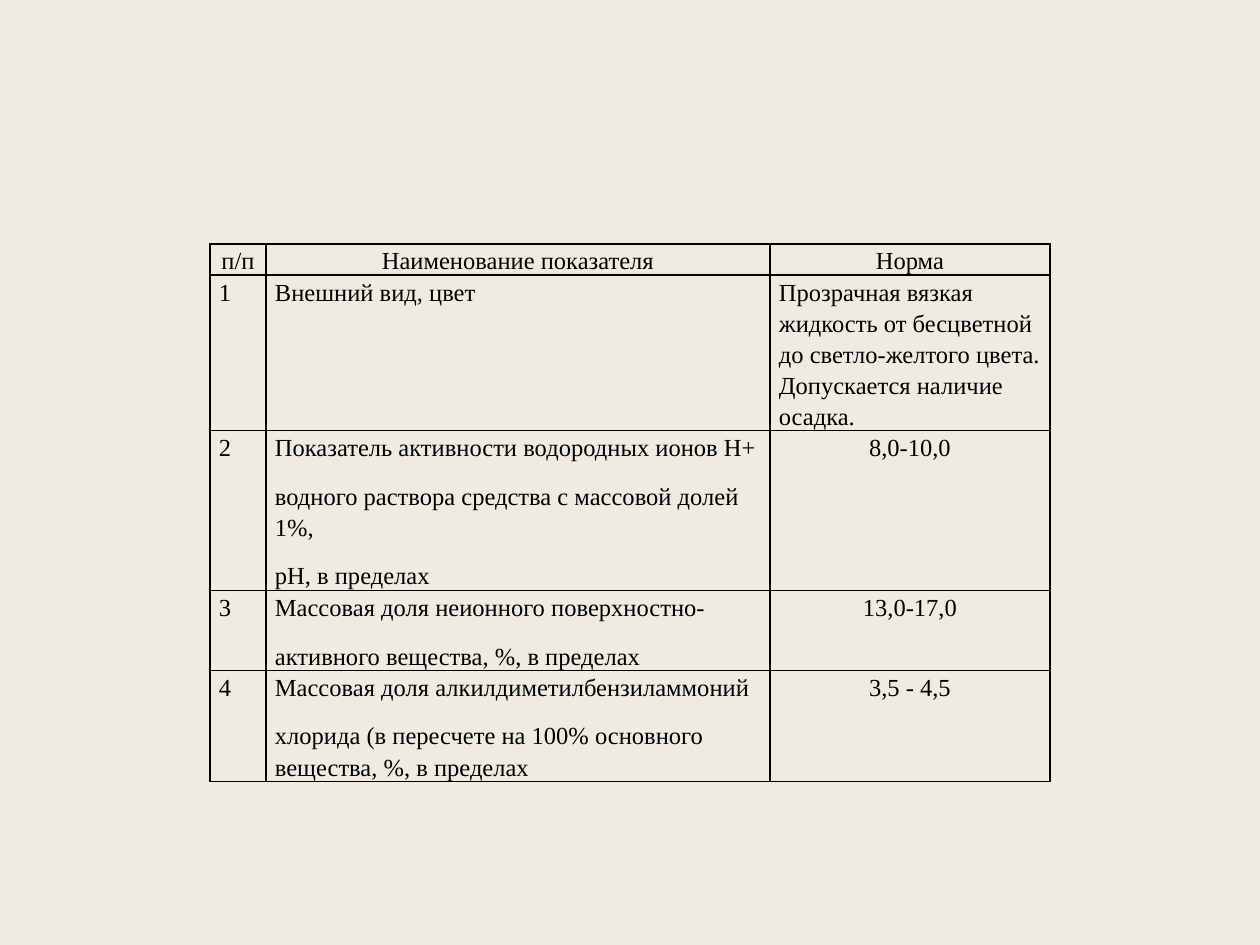
from lxml.etree import SubElement
from pptx import Presentation
from pptx.dml.color import RGBColor
from pptx.enum.text import PP_ALIGN
from pptx.oxml.ns import qn
from pptx.util import Pt

THEME = {
    "background": "EEECE1",
    "ink": "000000",
    "font": "Times New Roman",
    "size": Pt(14),
    "border": Pt(1),
}
PARAGRAPH = {"line_spacing": 1.15, "space_after": Pt(10), "space_before": Pt(0)}


def px(length):
    return round(length * 914400 / 126)


def draw_borders(cell):
    properties = cell._tc.get_or_add_tcPr()
    for position, side in enumerate(("a:lnL", "a:lnR", "a:lnT", "a:lnB")):
        line = SubElement(properties, qn(side), w=str(THEME["border"]))
        fill = SubElement(line, qn("a:solidFill"))
        SubElement(fill, qn("a:srgbClr"), val=THEME["ink"])
        properties.insert(position, line)


MARGINS = {
    "margin_left": px(9),
    "margin_right": px(9),
    "margin_top": 0,
    "margin_bottom": 0,
}
column_widths = [56, 504, 280]
row_heights = [31, 155, 160, 79, 111]
indicators = [
    ("п/п", "Наименование показателя", "Норма"),
    (
        "1",
        "Внешний вид, цвет",
        "Прозрачная вязкая жидкость от бесцветной до светло-желтого цвета. "
        "Допускается наличие осадка.",
    ),
    (
        "2",
        "Показатель активности водородных ионов Н+\n"
        "водного раствора средства с массовой долей 1%,\n"
        "рН, в пределах",
        "8,0-10,0",
    ),
    (
        "3",
        "Массовая доля неионного поверхностно-\nактивного вещества, %, в пределах",
        "13,0-17,0",
    ),
    (
        "4",
        "Массовая доля алкилдиметилбензиламмоний\n"
        "хлорида (в пересчете на 100% основного вещества, %, в пределах",
        "3,5 - 4,5",
    ),
]

deck = Presentation()
deck.slide_width, deck.slide_height = px(1260), px(945)
slide = deck.slides.add_slide(deck.slide_layouts[6])
slide.background.fill.solid()
slide.background.fill.fore_color.rgb = RGBColor.from_string(THEME["background"])

norms = slide.shapes.add_table(
    len(row_heights), len(column_widths),
    px(210), px(244), px(sum(column_widths)), px(sum(row_heights)),
).table
norms.first_row = False
norms.horz_banding = False
for column, width in zip(norms.columns, column_widths):
    column.width = px(width)
for row, height in zip(norms.rows, row_heights):
    row.height = px(height)

for row_number, indicator in enumerate(indicators):
    for column_number, wording in enumerate(indicator):
        cell = norms.cell(row_number, column_number)
        cell.text = wording
        cell.fill.background()
        draw_borders(cell)
        for name, value in MARGINS.items():
            setattr(cell, name, value)
        centred = row_number == 0 or (column_number == 2 and row_number > 1)
        for paragraph in cell.text_frame.paragraphs:
            paragraph.alignment = PP_ALIGN.CENTER if centred else PP_ALIGN.LEFT
            for name, value in PARAGRAPH.items():
                setattr(paragraph, name, value)
            for run in paragraph.runs:
                run.font.name = THEME["font"]
                run.font.size = THEME["size"]
                run.font.color.rgb = RGBColor.from_string(THEME["ink"])

deck.save("out.pptx")
